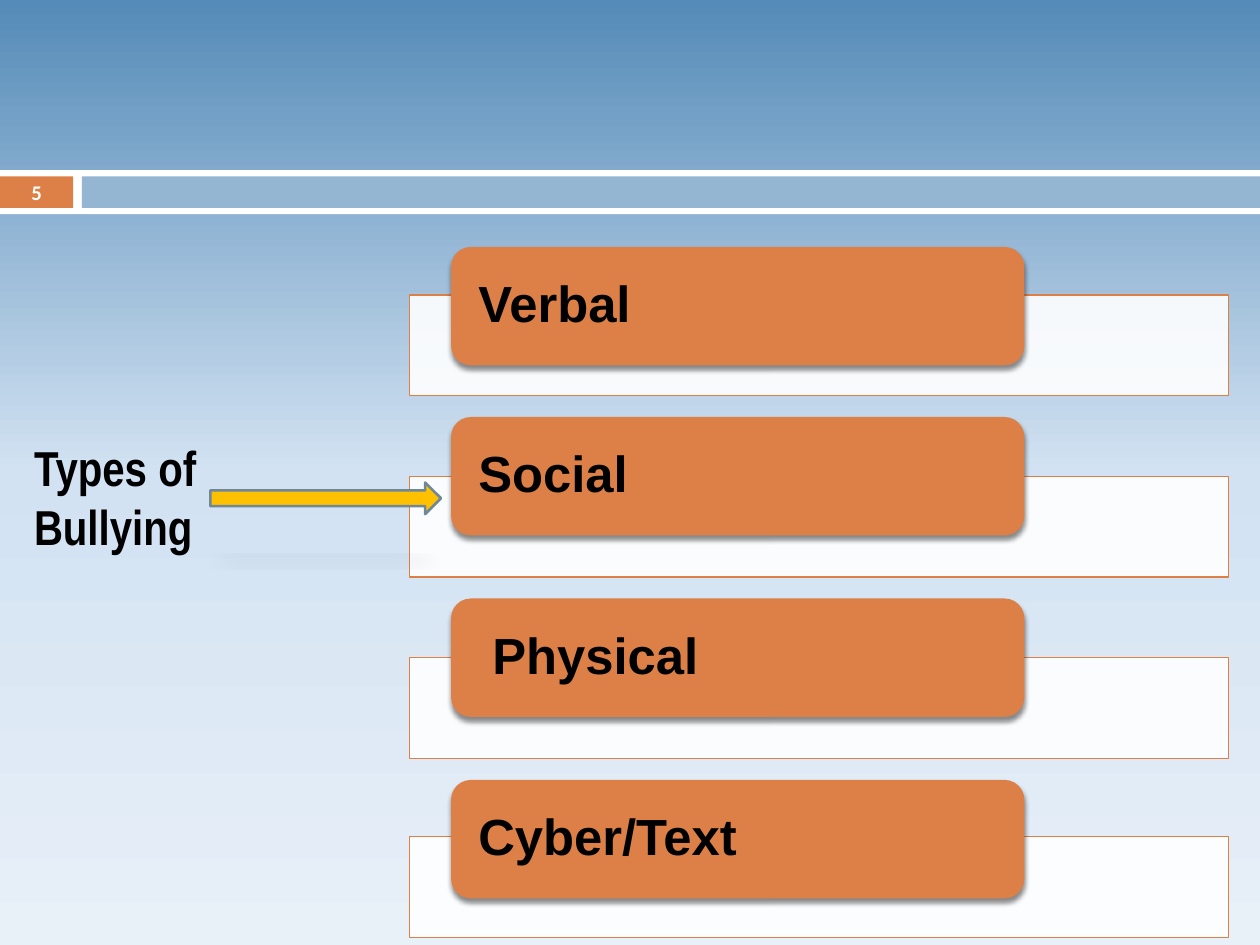
import copy
import pptx
import pptx.util
import pptx.dml.color
import pptx.enum.shapes
import pptx.enum.text
import pptx.oxml
import pptx.oxml.ns

Inches = pptx.util.Inches
Pt = pptx.util.Pt
Shapes = pptx.enum.shapes.MSO_SHAPE
Anchor = pptx.enum.text.MSO_ANCHOR
Align = pptx.enum.text.PP_ALIGN
qn = pptx.oxml.ns.qn

COLORS = {
    "sky_top": "558BB8", "sky_middle": "D2E2F2", "sky_bottom": "E8F0F8",
    "white": "FFFFFF", "black": "000000", "orange": "DD8047",
    "blue": "94B6D2", "yellow": "FFC000", "arrow_line": "6D879B",
}


def rgb(name):
    return pptx.dml.color.RGBColor.from_string(COLORS[name])


class SlideBuilder:
    heading_font = "Arial Narrow"
    card_font = "Arial"
    number_font = "Calibri"

    def __init__(self, deck):
        self.slide = deck.slides.add_slide(deck.slide_layouts[5])

    def background(self, stops):
        fill = self.slide.background.fill
        fill.gradient()
        fill.gradient_angle = 270
        stop_list = self.slide.element.find(".//" + qn("a:gsLst"))
        stop_list.append(copy.deepcopy(stop_list[-1]))
        for stop, (position, color) in zip(fill.gradient_stops, stops):
            stop.position = position
            stop.color.rgb = rgb(color)

    def shape(self, kind, place, fill, line=None, width=0.79):
        shape = self.slide.shapes.add_shape(kind, *map(Inches, place))
        shape.shadow.inherit = False
        shape.fill.solid()
        shape.fill.fore_color.rgb = rgb(fill)
        if line:
            shape.line.color.rgb = rgb(line)
            shape.line.width = Pt(width)
        else:
            shape.line.fill.background()
        return shape

    def transparency(self, shape, opacity):
        color = shape.element.spPr.find(qn("a:solidFill"))[0]
        color.append(pptx.oxml.parse_xml(
            f'<a:alpha {pptx.oxml.ns.nsdecls("a")} val="{opacity * 1000}"/>'))

    def shadow(self, shape, opacity, blur, distance, scale=""):
        effects = shape.element.spPr.find(qn("a:effectLst"))
        effects.append(pptx.oxml.parse_xml(
            f'<a:outerShdw {pptx.oxml.ns.nsdecls("a")} blurRad="{Pt(blur)}" '
            f'dist="{Pt(distance)}" dir="5400000" {scale} rotWithShape="0">'
            f'<a:srgbClr val="{COLORS["black"]}"><a:alpha val="{opacity * 1000}"/>'
            f'</a:srgbClr></a:outerShdw>'))

    def text(self, shape, words, size, font, color, align=Align.LEFT,
             anchor=Anchor.MIDDLE, side=0.1, edge=0, spacing=1.0):
        frame = shape.text_frame
        frame.text = words
        frame.word_wrap = True
        frame.auto_size = pptx.enum.text.MSO_AUTO_SIZE.NONE
        frame.vertical_anchor = anchor
        frame.margin_left = frame.margin_right = Inches(side)
        frame.margin_top = frame.margin_bottom = Inches(edge)
        para = frame.paragraphs[0]
        para.alignment = align
        para.line_spacing = spacing
        for span in para.runs:
            span.font.size = Pt(size)
            span.font.name = font
            span.font.bold = True
            span.font.color.rgb = rgb(color)

    def title(self, words, place):
        box = self.slide.shapes.title
        box.left, box.top, box.width, box.height = map(Inches, place)
        self.text(box, words, 28, self.heading_font, "black",
                  anchor=Anchor.TOP, edge=0.05)

    def header_band(self, number):
        self.shape(Shapes.RECTANGLE, (0, 1.35, 10, 0.35), "white")
        badge = self.shape(Shapes.RECTANGLE, (0, 1.4, 0.58, 0.25), "orange")
        self.text(badge, number, 11.9, self.number_font, "white", Align.CENTER)
        self.shape(Shapes.RECTANGLE, (0.65, 1.4, 9.35, 0.25), "blue")

    def type_row(self, words, card_top, plate_top):
        plate = self.shape(Shapes.RECTANGLE, (3.25, plate_top, 6.5, 0.8),
                           "white", "orange")
        self.transparency(plate, 90)
        card = self.shape(Shapes.ROUNDED_RECTANGLE,
                          (3.58, card_top, 4.55, 0.94), "orange")
        self.shadow(card, 45, 3, 2.4)
        self.text(card, words, 29, self.card_font, "black",
                  side=0.17, spacing=0.9)

    def arrow(self, place):
        arrow = self.shape(Shapes.RIGHT_ARROW, place, "yellow", "arrow_line", 1.5)
        self.shadow(arrow, 15, 12, 25, 'sx="90000" sy="-19000"')


def main():
    deck = pptx.Presentation()
    deck.slide_width = Inches(10)
    deck.slide_height = Inches(7.5)
    page = SlideBuilder(deck)
    page.background([(0, "sky_top"), (0.5, "sky_middle"), (1, "sky_bottom")])
    page.header_band("5")
    page.title("Types of Bullying", (0.17, 3.42, 2.67, 1.04))
    rows = [("Verbal", 1.96, 2.34), ("Social", 3.31, 3.78),
            (" Physical", 4.75, 5.22), ("Cyber/Text", 6.19, 6.64)]
    for words, card_top, plate_top in rows:
        page.type_row(words, card_top, plate_top)
    page.arrow((1.67, 3.83, 1.83, 0.25))
    deck.save("out.pptx")


if __name__ == "__main__":
    main()
